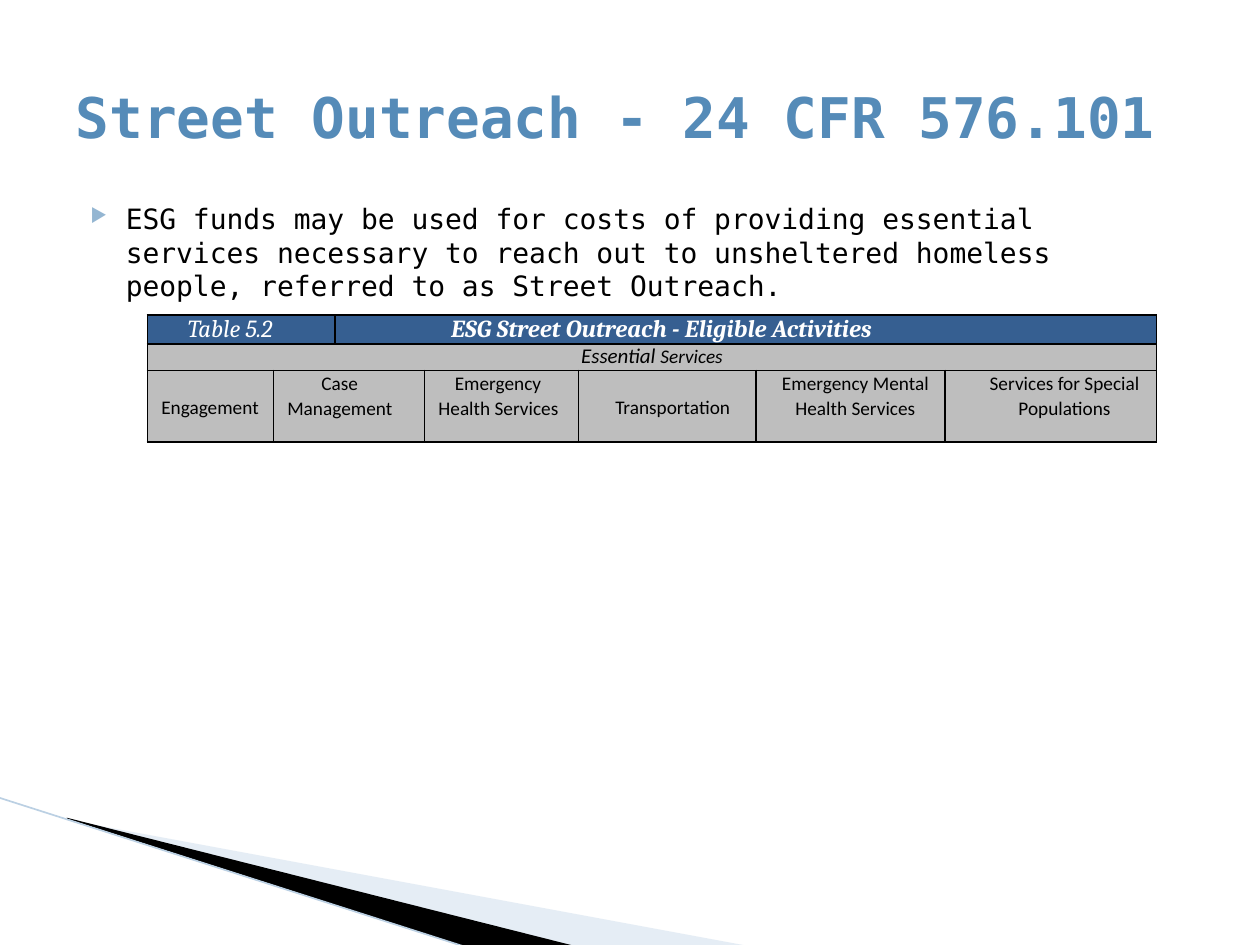
from dataclasses import dataclass
from typing import Optional

from lxml.etree import SubElement
from pptx import Presentation
from pptx.dml.color import RGBColor
from pptx.enum.shapes import MSO_CONNECTOR as Link
from pptx.enum.text import MSO_ANCHOR as Anchor, PP_ALIGN as Align
from pptx.oxml.ns import qn
from pptx.util import Inches, Pt

HUES = {"title": "558BB8", "ink": "000000", "white": "FFFFFF", "head": "365F91",
        "cell": "BEBEBE", "mark": "94B6D2", "pale": "C0D3E6", "line": "BBD0E3"}
MONO = "DejaVu Sans Mono"
WIDE, HIGH = Inches(10), Inches(7.5)
COLS = (10, 4.9, 7.1, 12.2, 14.1, 15, 16.8)
ROWS = (3.07, 2.8, 7.6)


@dataclass
class Cell:
    """A table cell: place, span, wording and paragraph layout."""
    row: int
    col: int
    span: int
    text: str
    left: float = 0
    first: float = 0
    align: Align = Align.LEFT
    drop: float = 0
    space: float = 1.07
    size: float = 11
    face: str = "Calibri"
    ink: str = "ink"
    fill: str = "cell"
    bold: bool = False
    slant: bool = False


@dataclass
class Wedge:
    """A corner wedge: points in percent of the slide, fill and opacity."""
    dots: tuple
    fill: str
    alpha: Optional[int] = None


HEAD = dict(space=Pt(16.3), size=14, face="Cambria", ink="white", fill="head", slant=True)
MID = Align.CENTER
CELLS = (
    Cell(0, 0, 2, "Table 5.2", 0.32, **HEAD),
    Cell(0, 2, 5, "ESG Street Outreach - Eligible Activities", 0.92, bold=True, **HEAD),
    Cell(1, 0, 7, "Essential Services", align=MID, space=Pt(14.6), size=12, slant=True),
    Cell(2, 0, 1, "Engagement", 0.11, drop=0.19),
    Cell(2, 1, 2, "Case Management", 0.11, 0.27),
    Cell(2, 3, 1, "Emergency Health Services", 0.11, 0.13),
    Cell(2, 4, 1, "Transportation", 0.09, align=MID, drop=0.19),
    Cell(2, 5, 1, "Emergency Mental Health Services", 0.08, align=MID),
    Cell(2, 6, 1, "Services for Special Populations", 0.22, align=MID),
)
WEDGES = (
    Wedge(((5.5, 86.8), (59.5, 100.13), (45.6, 100.13), (5.5, 86.67)), "pale", 40),
    Wedge(((5.3, 86.53), (45.7, 100.13), (37.2, 100.27), (5.4, 86.67)), "ink"),
)


def hue(name: str) -> RGBColor:
    """Look up a named colour."""
    return RGBColor.from_string(HUES[name])


def across(part: float) -> int:
    """Turn a percentage of the slide's width into a length."""
    return round(WIDE * part / 100)


def down(part: float) -> int:
    """Turn a percentage of the slide's height into a length."""
    return round(HIGH * part / 100)


def style(font, face: str, size: float, ink: str, bold=False, slant=False) -> None:
    """Format a font."""
    font.name, font.size, font.bold, font.italic = face, Pt(size), bold, slant
    font.color.rgb = hue(ink)


def indent(para, left: float, first: float) -> None:
    """Set the left margin and first-line indent in inches."""
    props = para._p.get_or_add_pPr()
    props.set("marL", str(Inches(left)))
    props.set("indent", str(Inches(first)))


def draw_wedge(slide, wedge: Wedge) -> None:
    """Draw one corner wedge."""
    dots = [(across(x), down(y)) for x, y in wedge.dots]
    path = slide.shapes.build_freeform(*dots[0])
    path.add_line_segments(dots[1:], close=True)
    shape = path.convert_to_shape()
    shape.shadow.inherit = False
    shape.fill.solid()
    shape.fill.fore_color.rgb = hue(wedge.fill)
    shape.line.fill.background()
    if wedge.alpha:
        tint = next(shape._element.spPr.iter(qn("a:srgbClr")))
        SubElement(tint, qn("a:alpha"), val=str(wedge.alpha * 1000))


def draw_edge(slide) -> None:
    """Draw the thin line along the wedges."""
    edge = slide.shapes.add_connector(
        Link.STRAIGHT, across(-0.1), down(84.4), across(37.1), down(100.27))
    edge.line.color.rgb, edge.line.width = hue("line"), Pt(0.95)
    SubElement(edge._element.spPr, qn("a:effectLst"))


def draw_title(slide) -> None:
    """Place and format the title."""
    title = slide.shapes.title
    title.left, title.top = across(5), down(4)
    title.width, title.height = across(90), down(16.67)
    frame = title.text_frame
    frame.text = "Street Outreach - 24 CFR 576.101"
    frame.word_wrap, frame.vertical_anchor = True, Anchor.MIDDLE
    para = frame.paragraphs[0]
    para.alignment = Align.LEFT
    style(para.runs[0].font, MONO, 32, "title", bold=True)


def draw_body(slide) -> None:
    """Draw the bulleted statement."""
    frame = slide.shapes.add_textbox(across(5), down(20.67), across(90), down(12)).text_frame
    frame.word_wrap = True
    frame.text = ("ESG funds may be used for costs of providing essential services necessary "
                  "to reach out to unsheltered homeless people, referred to as Street Outreach.")
    para = frame.paragraphs[0]
    indent(para, 0.4, -0.28)
    props = para._p.get_or_add_pPr()
    SubElement(SubElement(props, qn("a:buClr")), qn("a:srgbClr"), val=HUES["mark"])
    SubElement(props, qn("a:buSzPct"), val="68000")
    SubElement(props, qn("a:buChar"), char="▶")
    style(para.runs[0].font, MONO, 16, "ink")


def border(cell) -> None:
    """Give a cell four thin borders, ahead of its fill."""
    props = cell._tc.get_or_add_tcPr()
    for spot, side in enumerate(("lnL", "lnR", "lnT", "lnB")):
        line = SubElement(props, qn(f"a:{side}"), w=str(Pt(1)))
        SubElement(SubElement(line, qn("a:solidFill")), qn("a:srgbClr"), val=HUES["ink"])
        props.insert(spot, line)


def fill_cell(table, item: Cell) -> None:
    """Merge, fill and format one cell."""
    cell = table.cell(item.row, item.col)
    if item.span > 1:
        cell.merge(table.cell(item.row, item.col + item.span - 1))
    cell.margin_left = cell.margin_right = cell.margin_bottom = 0
    cell.margin_top = Inches(item.drop)
    cell.fill.solid()
    cell.fill.fore_color.rgb = hue(item.fill)
    cell.text_frame.text = item.text
    para = cell.text_frame.paragraphs[0]
    para.alignment, para.line_spacing = item.align, item.space
    indent(para, item.left, item.first)
    style(para.runs[0].font, item.face, item.size, item.ink, item.bold, item.slant)


def draw_table(slide) -> None:
    """Draw the table of eligible activities."""
    table = slide.shapes.add_table(len(ROWS), len(COLS), across(11.7), down(33.33),
                                   across(sum(COLS)), down(sum(ROWS))).table
    for col, part in zip(table.columns, COLS):
        col.width = across(part)
    for row, part in zip(table.rows, ROWS):
        row.height = down(part)
    for item in CELLS:
        fill_cell(table, item)
    for cell in table.iter_cells():
        border(cell)
    para = table.cell(1, 0).text_frame.paragraphs[0]
    para.runs[0].text = "Essential "
    tail = para.add_run()
    tail.text = "Services"
    style(tail.font, "Calibri", 11, "ink", slant=True)


def main() -> None:
    """Build and save the slide."""
    deck = Presentation()
    deck.slide_width, deck.slide_height = WIDE, HIGH
    slide = deck.slides.add_slide(deck.slide_layouts[5])
    for wedge in WEDGES:
        draw_wedge(slide, wedge)
    draw_edge(slide)
    draw_body(slide)
    draw_title(slide)
    draw_table(slide)
    deck.save("out.pptx")


if __name__ == "__main__":
    main()
